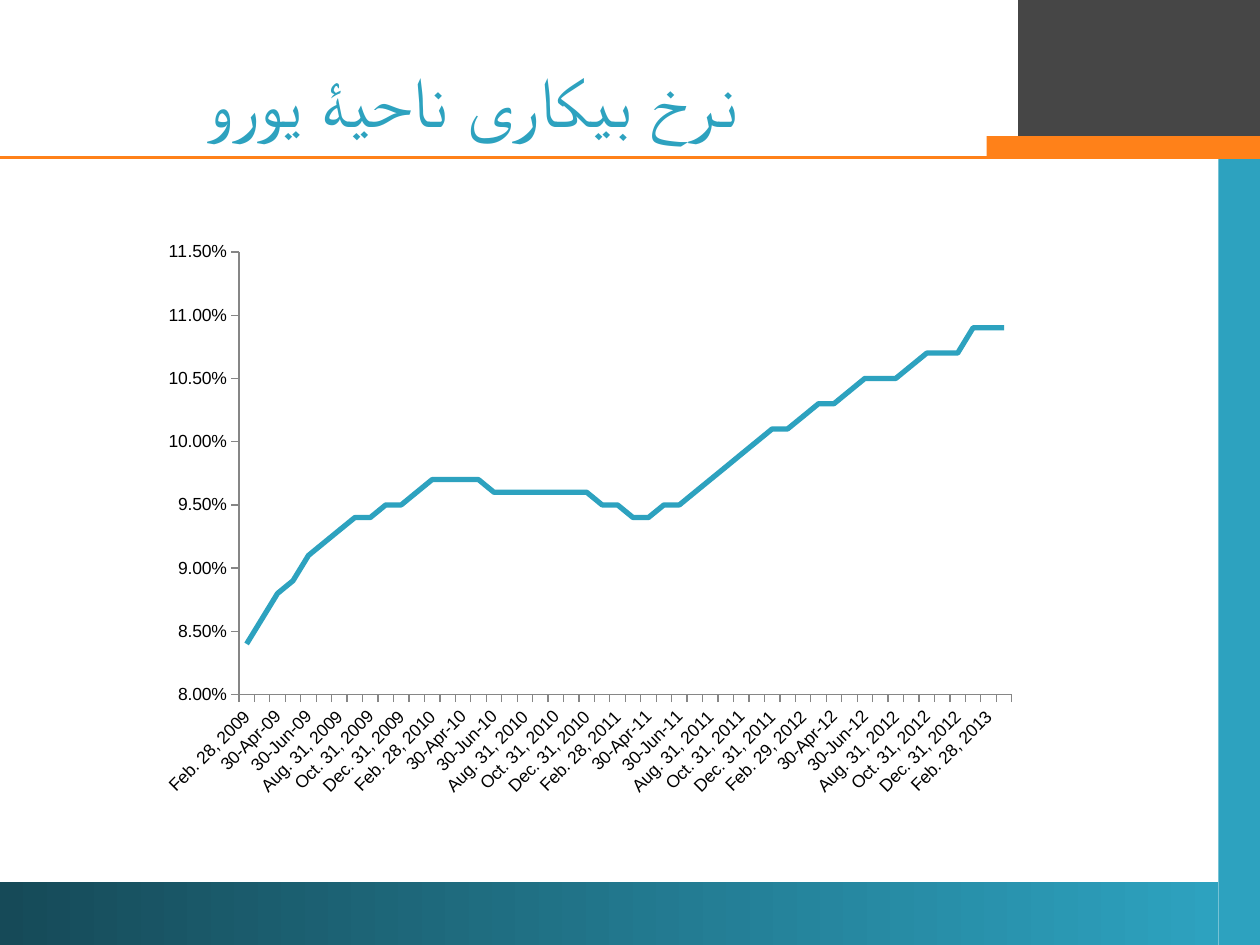
from lxml.etree import SubElement
from pptx import Presentation
from pptx.chart.data import CategoryChartData
from pptx.dml.color import RGBColor
from pptx.enum.chart import XL_CHART_TYPE, XL_TICK_MARK
from pptx.enum.shapes import MSO_CONNECTOR, MSO_SHAPE
from pptx.enum.text import MSO_ANCHOR, PP_ALIGN
from pptx.oxml.ns import qn
from pptx.util import Inches, Pt

TEAL = RGBColor(0x2D, 0xA2, 0xBF)
DARK_TEAL = RGBColor(0x16, 0x4A, 0x58)
ORANGE = RGBColor(0xFF, 0x81, 0x19)
CHARCOAL = RGBColor(0x46, 0x46, 0x46)
GRAY = RGBColor(0x86, 0x86, 0x86)
BLACK = RGBColor(0, 0, 0)
FONT = "Arial"

MONTHS = [
    ("Jan", 31), ("Feb", 28), ("Mar", 31), ("Apr", 30), ("May", 31), ("Jun", 30),
    ("Jul", 31), ("Aug", 31), ("Sept", 30), ("Oct", 31), ("Nov", 30), ("Dec", 31),
]
SHORT_MONTHS = ("Mar", "Apr", "May", "Jun", "Jul")
RATES = [
    8.4, 8.6, 8.8, 8.9, 9.1, 9.2, 9.3, 9.4, 9.4, 9.5, 9.5,
    9.6, 9.7, 9.7, 9.7, 9.7, 9.6, 9.6, 9.6, 9.6, 9.6, 9.6, 9.6,
    9.5, 9.5, 9.4, 9.4, 9.5, 9.5, 9.6, 9.7, 9.8, 9.9, 10.0, 10.1,
    10.1, 10.2, 10.3, 10.3, 10.4, 10.5, 10.5, 10.5, 10.6, 10.7, 10.7, 10.7,
    10.9, 10.9, 10.9,
]


def month_end(index):
    year, month = 2009 + index // 12, index % 12
    name, day = MONTHS[month]
    if name == "Feb" and year % 4 == 0:
        day += 1
    if name in SHORT_MONTHS:
        return f"{day}-{name}-{year % 100:02d}"
    return f"{name}. {day}, {year}"


def add_band(slide, left, top, width, height, color):
    band = slide.shapes.add_shape(
        MSO_SHAPE.RECTANGLE, Inches(left), Inches(top), Inches(width), Inches(height)
    )
    band.shadow.inherit = False
    band.fill.solid()
    band.fill.fore_color.rgb = color
    band.line.fill.background()
    return band


def add_frame(slide, width, height):
    add_band(slide, width - 0.33, 0.25, 0.33, height - 0.25, TEAL)
    footer = add_band(slide, 0, height - 0.5, width - 0.33, 0.5, TEAL)
    footer.fill.gradient()
    footer.fill.gradient_angle = 0
    for stop, color, position in zip(
        footer.fill.gradient_stops, (DARK_TEAL, TEAL), (0, 1)
    ):
        stop.color.rgb = color
        stop.position = position
    add_band(slide, width - 1.92, 0, 1.92, 1.08, CHARCOAL)
    rule = slide.shapes.add_connector(
        MSO_CONNECTOR.STRAIGHT, Inches(width), Inches(1.25), 0, Inches(1.25)
    )
    rule.line.color.rgb = ORANGE
    rule.line.width = Pt(2.25)
    SubElement(rule._element.spPr, qn("a:effectLst"))
    add_band(slide, width - 2.17, 1.08, 2.17, 0.17, ORANGE)


def add_title(slide, left, top, width, height, text):
    title = slide.shapes.title
    title.left, title.top = Inches(left), Inches(top)
    title.width, title.height = Inches(width), Inches(height)
    title.text_frame.vertical_anchor = MSO_ANCHOR.MIDDLE
    paragraph = title.text_frame.paragraphs[0]
    paragraph.alignment = PP_ALIGN.CENTER
    paragraph._p.get_or_add_pPr().set("rtl", "1")
    run = paragraph.add_run()
    run.text = text
    run.font.size = Pt(40)
    run.font.name = FONT
    run.font.color.rgb = TEAL
    SubElement(run._r.get_or_add_rPr(), qn("a:cs")).set("typeface", FONT)


def style_axis(axis):
    axis.has_major_gridlines = False
    axis.major_tick_mark = XL_TICK_MARK.OUTSIDE
    axis.minor_tick_mark = XL_TICK_MARK.NONE
    axis.format.line.color.rgb = GRAY
    axis.format.line.width = Pt(0.75)
    axis.tick_labels.font.size = Pt(10)


def add_rate_chart(slide, left, top, width, height):
    data = CategoryChartData(number_format="0.00%")
    data.categories = [month_end(index + 1) for index in range(len(RATES))]
    data.add_series("Series 1", [round(rate / 100, 3) for rate in RATES])
    chart = slide.shapes.add_chart(
        XL_CHART_TYPE.LINE,
        Inches(left), Inches(top), Inches(width), Inches(height), data,
    ).chart
    chart.has_legend = False
    chart.has_title = False
    chart.font.name = FONT
    chart.font.size = Pt(10)
    chart.font.color.rgb = BLACK
    chart.plots[0].vary_by_categories = False

    series = chart.plots[0].series[0]
    series.smooth = False
    series.format.line.color.rgb = TEAL
    series.format.line.width = Pt(3)

    style_axis(chart.category_axis)
    style_axis(chart.value_axis)
    chart.value_axis.minimum_scale = 0.08
    chart.value_axis.maximum_scale = 0.115
    chart.value_axis.major_unit = 0.005
    chart.value_axis.tick_labels.number_format = "0.00%"
    chart.value_axis.tick_labels.number_format_is_linked = False

    category_xml = chart.category_axis._element
    category_xml.find(qn("c:txPr")).find(qn("a:bodyPr")).set("rot", "-2700000")
    multi_level = category_xml.find(qn("c:noMultiLvlLbl"))
    for tag, skip in (("c:tickLblSkip", "2"), ("c:tickMarkSkip", "1")):
        element = SubElement(category_xml, qn(tag))
        element.set("val", skip)
        multi_level.addprevious(element)


def main():
    presentation = Presentation()
    presentation.slide_width = Inches(10)
    presentation.slide_height = Inches(7.5)
    slide = presentation.slides.add_slide(presentation.slide_layouts[5])
    add_frame(slide, 10, 7.5)
    add_title(slide, 0, 0.5, 7.5, 0.58, "نرخ بیکاری ناحیۀ یورو")
    add_rate_chart(slide, 1.17, 1.83, 7, 4.58)
    presentation.save("out.pptx")


if __name__ == "__main__":
    main()
